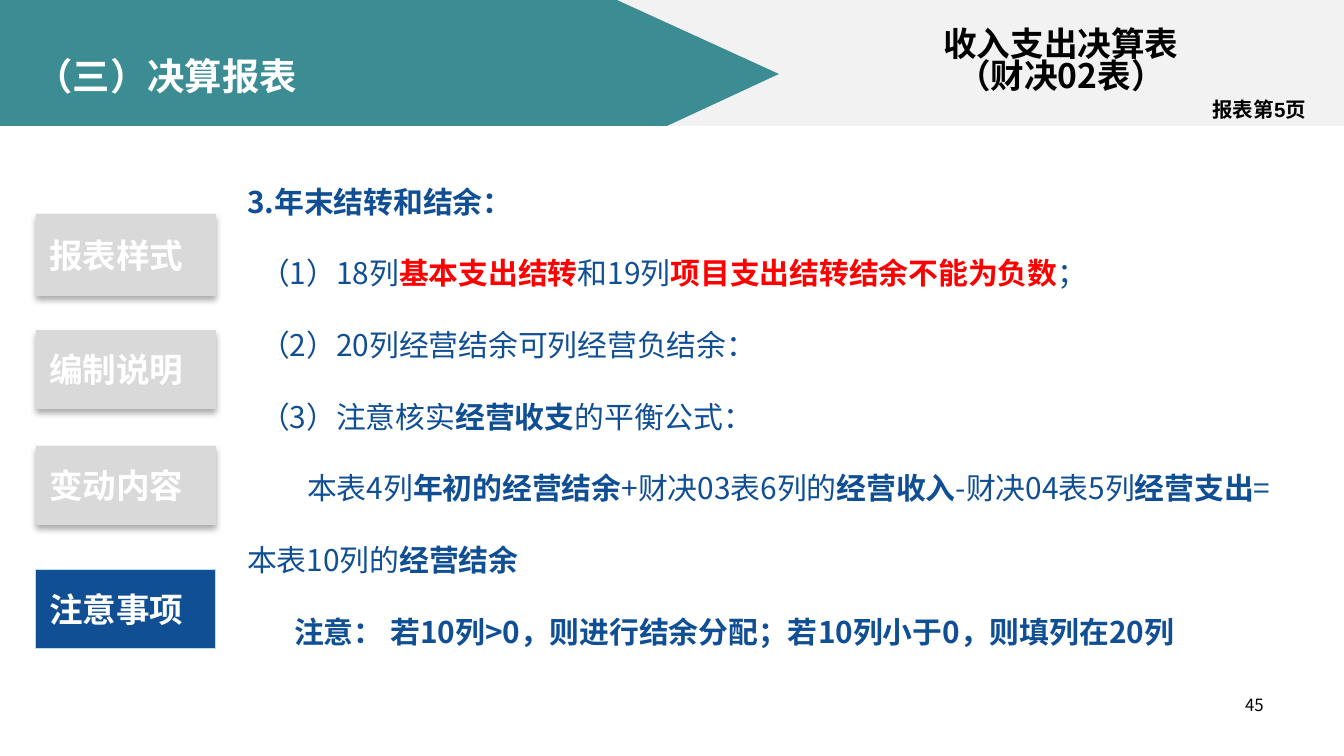
"""Build the slide on year-end carry-over checks for the final accounts."""
from lxml import etree
from pptx import Presentation
from pptx.dml.color import RGBColor
from pptx.enum.shapes import MSO_SHAPE
from pptx.enum.text import MSO_ANCHOR, MSO_AUTO_SIZE, PP_ALIGN
from pptx.oxml.ns import qn
from pptx.util import Pt

RECTANGLE = MSO_SHAPE.RECTANGLE
TOP, MIDDLE = MSO_ANCHOR.TOP, MSO_ANCHOR.MIDDLE
LEFT, CENTER, RIGHT = PP_ALIGN.LEFT, PP_ALIGN.CENTER, PP_ALIGN.RIGHT
NO_AUTOFIT = MSO_AUTO_SIZE.NONE
PX = 914400 / 134.4


class Theme:
    font, note_font = "Noto Sans CJK SC", "Arial"
    band, teal, navy, gray = "F2F2F2", "3C8C93", "114F95", "D9D9D9"
    white, black, red, pale = "FFFFFF", "000000", "FF0000", "BBE0E3"
    title, heading, body, note, number = 20, 18, 16, 11, 9


PLAIN = {"color": Theme.navy, "bold": False}
STRONG = {"color": Theme.navy, "bold": True}
ALERT = {"color": Theme.red, "bold": True}

TITLE = "（三）决算报表"
TABLE_NAME = ["收入支出决算表", "（财决02表）"]
PAGE_NOTE = "报表第5页"
PAGE_NUMBER = "45"
TABS = [
    ("报表样式", 214, 82),
    ("编制说明", 330, 79),
    ("变动内容", 446, 79),
    ("注意事项", 570, 79),
]
ACTIVE_TAB = "注意事项"
RULES = [
    (0, [("3.年末结转和结余：", STRONG)]),
    (13, [("（1）18列", PLAIN), ("基本支出结转", ALERT), ("和19列", PLAIN),
          ("项目支出结转结余不能为负数", ALERT), ("；", PLAIN)]),
    (13, [("（2）20列经营结余可列经营负结余：", PLAIN)]),
    (13, [("（3）注意核实", PLAIN), ("经营收支", STRONG), ("的平衡公式：", PLAIN)]),
    (60, [("本表4列", PLAIN), ("年初的经营结余", STRONG), ("+财决03表6列的", PLAIN),
          ("经营收入", STRONG), ("-财决04表5列", PLAIN), ("经营支出", STRONG),
          ("=本表10列的", PLAIN), ("经营结余", STRONG)]),
    (47, [("注意： 若10列>0，则进行结余分配；若10列小于0，则填列在20列", STRONG)]),
]
ARROW = [(0, 0), (617, 0), (779, 74), (667, 126), (0, 126)]


def px(*lengths):
    return [round(length * PX) for length in lengths]


def rgb(code):
    return RGBColor.from_string(code)


def write(shape, lines, size, align=LEFT, anchor=TOP, spacing=None, font=Theme.font):
    frame = shape.text_frame
    settings = {"word_wrap": True, "auto_size": NO_AUTOFIT, "vertical_anchor": anchor}
    for key, value in settings.items():
        setattr(frame, key, value)
    for index, (indent, runs) in enumerate(lines):
        paragraph = frame.add_paragraph() if index else frame.paragraphs[0]
        paragraph.alignment = align
        paragraph.line_spacing = spacing
        paragraph._p.get_or_add_pPr().set("indent", str(*px(indent)))
        for text, look in runs:
            run = paragraph.add_run()
            run.text = text
            for key, value in {"size": Pt(size), "bold": look["bold"], "name": font}.items():
                setattr(run.font, key, value)
            run.font.color.rgb = rgb(look["color"])
            etree.SubElement(run._r.get_or_add_rPr(), qn("a:ea"), typeface=font)


def one_style(texts, color, bold=True):
    return [(0, [(text, {"color": color, "bold": bold})]) for text in texts]


def paint(shape, fill):
    shape.shadow.inherit = False
    shape.fill.solid()
    shape.fill.fore_color.rgb = rgb(fill)
    shape.line.fill.background()


def drop_shadow(shape):
    effects = shape._element.spPr.find(qn("a:effectLst"))
    shadow = etree.SubElement(effects, qn("a:outerShdw"), blurRad=str(Pt(3.5)),
                              dist=str(Pt(2.2)), dir="5400000", rotWithShape="0")
    color = etree.SubElement(shadow, qn("a:srgbClr"), val=Theme.black)
    etree.SubElement(color, qn("a:alpha"), val="32000")


def main():
    deck = Presentation()
    deck.slide_width, deck.slide_height = px(1344, 756)
    slide = deck.slides.add_slide(deck.slide_layouts[5])
    shapes = slide.shapes

    paint(shapes.add_shape(RECTANGLE, *px(258, 0, 1086, 126)), Theme.band)
    outline = shapes.build_freeform(*ARROW[0], scale=PX)
    outline.add_line_segments(ARROW[1:], close=True)
    paint(outline.convert_to_shape(), Theme.teal)

    title = shapes.title
    title.left, title.top, title.width, title.height = px(22, 46, 633, 60)
    write(title, one_style([TITLE], Theme.white), Theme.title, anchor=MIDDLE)
    shapes._spTree.append(title._element)

    table_name = shapes.add_textbox(*px(786, 15, 550, 95))
    write(table_name, one_style(TABLE_NAME, Theme.black), Theme.heading,
          CENTER, MIDDLE, spacing=0.8)
    page_number = shapes.add_textbox(*px(964, 688, 313, 52))
    write(page_number, one_style([PAGE_NUMBER], Theme.black, False), Theme.number, RIGHT)
    rules = shapes.add_textbox(*px(234, 141, 1075, 567))
    write(rules, RULES, Theme.body, spacing=2.0)

    for label, top, height in TABS:
        tab = shapes.add_shape(RECTANGLE, *px(36, top, 180, height))
        active = label == ACTIVE_TAB
        paint(tab, Theme.navy if active else Theme.gray)
        if active:
            tab.line.color.rgb = rgb(Theme.pale)
            tab.line.width = Pt(0.5)
        else:
            drop_shadow(tab)
        write(tab, one_style([label], Theme.white), Theme.heading, anchor=MIDDLE)

    page_note = shapes.add_textbox(*px(1199, 90, 128, 39))
    write(page_note, one_style([PAGE_NOTE], Theme.black), Theme.note, font=Theme.note_font)
    deck.save("out.pptx")


if __name__ == "__main__":
    main()
